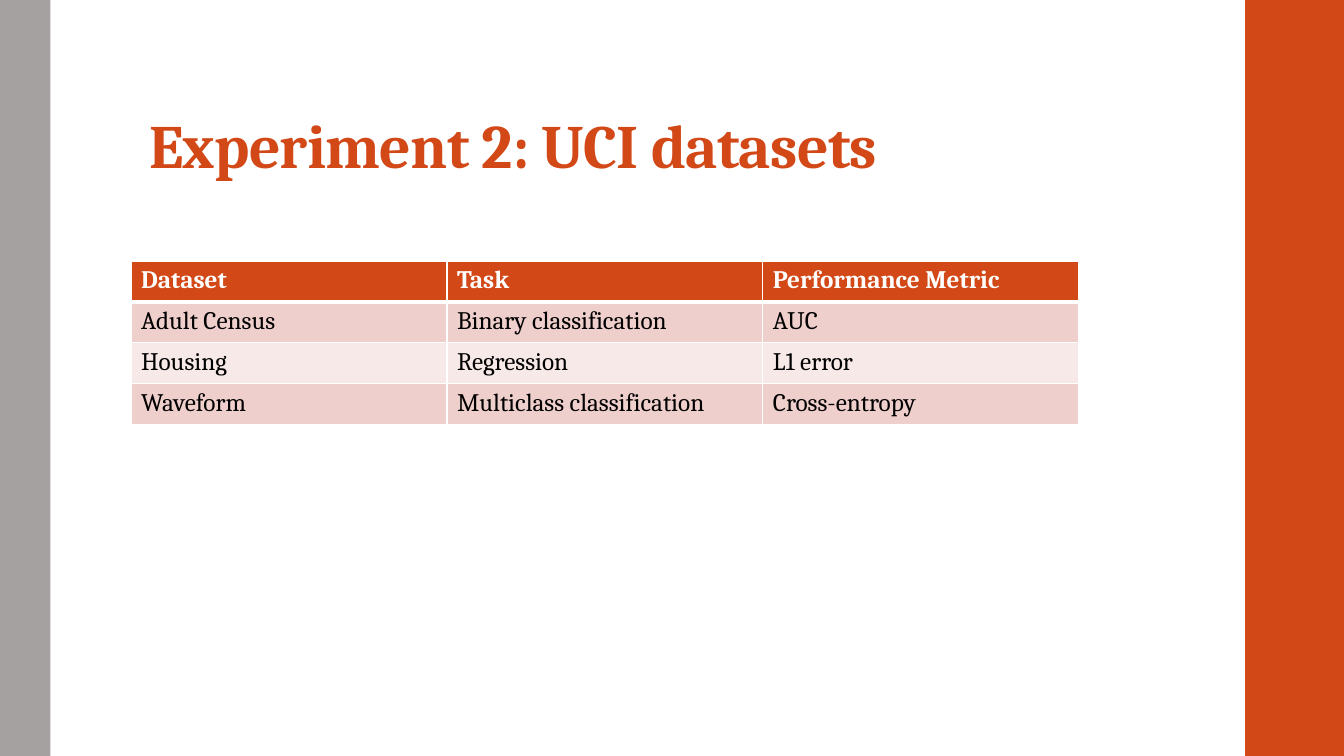
import pptx
import pptx.dml.color
import pptx.enum.shapes
import pptx.enum.text
import pptx.oxml.ns
import pptx.util
from lxml import etree

Inches, Pt = pptx.util.Inches, pptx.util.Pt

COLORS = {
    "accent": "D34817",
    "gray": "A6A1A1",
    "white": "FFFFFF",
    "black": "000000",
    "band_dark": "EFCFCC",
    "band_light": "F7E9E8",
}

ROWS = [
    ["Dataset", "Task", "Performance Metric"],
    ["Adult Census", "Binary classification", "AUC"],
    ["Housing", "Regression", "L1 error"],
    ["Waveform", "Multiclass classification", "Cross-entropy"],
]


def rgb(name):
    return pptx.dml.color.RGBColor.from_string(COLORS[name])


class SlideBuilder:
    """Holds the font and the current slide."""

    def __init__(self, s, font):
        self.s = s
        self.font = font

    def format_run(self, r, size, color, bold):
        r.font.name = self.font
        r.font.size = Pt(size)
        r.font.bold = bold
        r.font.color.rgb = rgb(color)

    def bar(self, left, width, color):
        """Full-height vertical bar."""
        sp = self.s.shapes.add_shape(
            pptx.enum.shapes.MSO_SHAPE.RECTANGLE,
            Inches(left), 0, Inches(width), Inches(7.5))
        sp.shadow.inherit = False
        sp.fill.solid()
        sp.fill.fore_color.rgb = rgb(color)
        sp.line.fill.background()

    def title(self, text, left, top, width, height):
        sp = self.s.shapes.add_textbox(
            Inches(left), Inches(top), Inches(width), Inches(height))
        tf = sp.text_frame
        tf.word_wrap = True
        tf.vertical_anchor = pptx.enum.text.MSO_ANCHOR.BOTTOM
        tf.margin_top, tf.margin_bottom = Inches(0.03), Inches(0.05)
        tf.text = text
        p = tf.paragraphs[0]
        p.line_spacing = 0.9
        r = p.runs[0]
        self.format_run(r, 44, "accent", True)
        r.font._element.set("spc", "-50")

    def border(self, cell, side, width):
        """White line on one side (L, R, T or B) of a cell."""
        qn = pptx.oxml.ns.qn
        ln = etree.SubElement(
            cell._tc.get_or_add_tcPr(), qn(f"a:ln{side}"), w=str(Pt(width)))
        fill = etree.SubElement(ln, qn("a:solidFill"))
        etree.SubElement(fill, qn("a:srgbClr"), val=COLORS["white"])

    def cell(self, cell, text, row):
        header = row == 0
        widths = {"L": 1, "R": 1, "T": 3 if row == 1 else 1, "B": 3 if header else 1}
        for side, width in widths.items():
            self.border(cell, side, width)
        band = "band_dark" if row % 2 else "band_light"
        cell.fill.solid()
        cell.fill.fore_color.rgb = rgb("accent" if header else band)
        cell.text_frame.text = text
        r = cell.text_frame.paragraphs[0].runs[0]
        self.format_run(r, 18, "white" if header else "black", header)

    def table(self, rows, left, top, width, height):
        table = self.s.shapes.add_table(
            len(rows), len(rows[0]), Inches(left), Inches(top),
            Inches(width), Inches(height)).table
        for i, row in enumerate(rows):
            for j, text in enumerate(row):
                self.cell(table.cell(i, j), text, i)


def main():
    prs = pptx.Presentation()
    prs.slide_width, prs.slide_height = Inches(13.33), Inches(7.5)
    s = prs.slides.add_slide(prs.slide_layouts[6])
    builder = SlideBuilder(s, "Cambria")
    builder.bar(12.35, 0.98, "accent")
    builder.bar(0, 0.5, "gray")
    builder.title("Experiment 2: UCI datasets", 1.38, 0.32, 10.6, 1.53)
    builder.table(ROWS, 1.3, 2.59, 9.4, 1.62)
    prs.save("out.pptx")


if __name__ == "__main__":
    main()
